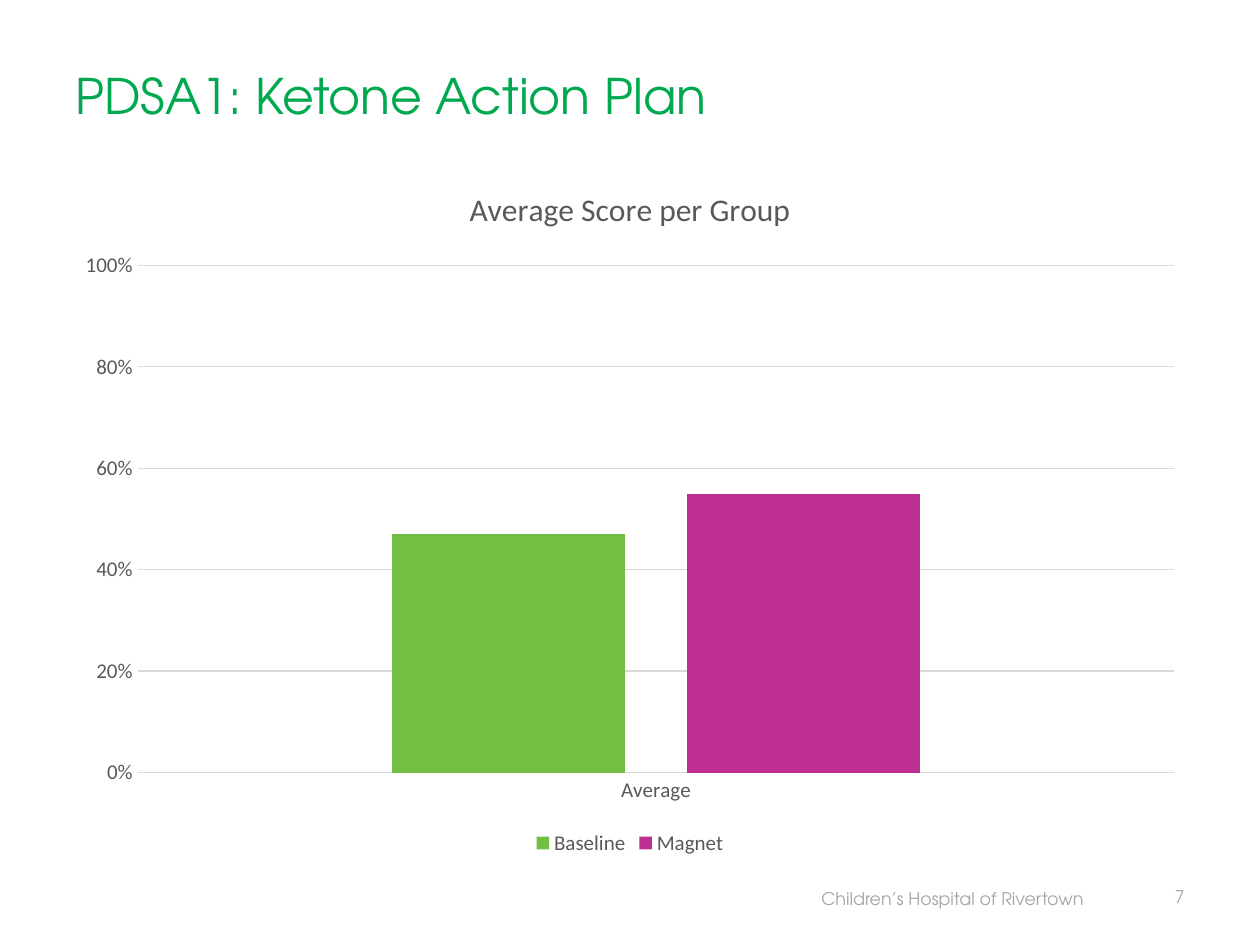
"""Build the ketone action plan slide with its average score chart."""
from pptx import Presentation, util as u
from pptx.chart.data import CategoryChartData
from pptx.dml.color import RGBColor
from pptx.enum import chart as ch, text as t

GREEN = RGBColor(0x00, 0xA9, 0x4F)
LIME = RGBColor(0x72, 0xBF, 0x44)
MAGENTA = RGBColor(0xBD, 0x2F, 0x92)
DARK_GRAY = RGBColor(0x59, 0x59, 0x59)
MID_GRAY = RGBColor(0xA6, 0xA6, 0xA6)
LIGHT_GRAY = RGBColor(0xD9, 0xD9, 0xD9)
HEAD_FONT, CHART_FONT = "TeX Gyre Adventor", "Calibri"

HEADING = "PDSA1: Ketone Action Plan"
CHART_TITLE = "Average Score per Group"
CATEGORIES = ["Average"]
GROUPS = [("Baseline", 0.47, LIME), ("Magnet", 0.55, MAGENTA)]
FOOTER = "Children’s Hospital of Rivertown"
PAGE = "7"

WIDTH, HEIGHT, MARGIN = 720, 540, 36
CONTENT_WIDTH = WIDTH - 2 * MARGIN


def style_font(font, size, color, name):
    font.size, font.name, font.bold = u.Pt(size), name, False
    font.color.rgb = color


def write(frame, words, size=10, color=MID_GRAY, name=HEAD_FONT,
          align=t.PP_ALIGN.LEFT, anchor=t.MSO_ANCHOR.TOP, wrap=True):
    frame.text = words
    frame.word_wrap = wrap
    frame.auto_size = t.MSO_AUTO_SIZE.NONE
    frame.vertical_anchor = anchor
    frame.paragraphs[0].alignment = align
    style_font(frame.paragraphs[0].runs[0].font, size, color, name)


def style_line(line):
    line.color.rgb = LIGHT_GRAY
    line.width = u.Pt(0.75)


def add_score_chart(slide):
    scores = CategoryChartData(number_format="0%")
    scores.categories = CATEGORIES
    for group, score, _ in GROUPS:
        scores.add_series(group, [score])
    chart = slide.shapes.add_chart(
        ch.XL_CHART_TYPE.COLUMN_CLUSTERED, u.Pt(MARGIN), u.Pt(92.16),
        u.Pt(CONTENT_WIDTH), u.Pt(399.6), scores).chart
    style_font(chart.font, 12, DARK_GRAY, CHART_FONT)

    chart.has_title = True
    heading = chart.chart_title.text_frame
    heading.text = CHART_TITLE
    style_font(heading.paragraphs[0].runs[0].font, 18, DARK_GRAY, CHART_FONT)
    chart.chart_title.include_in_layout = False

    chart.has_legend = True
    chart.legend.position = ch.XL_LEGEND_POSITION.BOTTOM
    chart.legend.include_in_layout = False
    style_font(chart.legend.font, 12, DARK_GRAY, CHART_FONT)

    for axis in (chart.category_axis, chart.value_axis):
        axis.major_tick_mark = axis.minor_tick_mark = ch.XL_TICK_MARK.NONE
        style_font(axis.tick_labels.font, 12, DARK_GRAY, CHART_FONT)
    style_line(chart.category_axis.format.line)
    percent = chart.value_axis
    percent.minimum_scale, percent.maximum_scale = 0, 1
    percent.major_unit = 0.2
    percent.tick_labels.number_format = "0%"
    percent.tick_labels.number_format_is_linked = False
    percent.format.line.fill.background()
    percent.has_major_gridlines = True
    style_line(percent.major_gridlines.format.line)

    columns = chart.plots[0]
    columns.gap_width, columns.overlap = 219, -27
    columns.vary_by_categories = False
    for series, (_, _, color) in zip(columns.series, GROUPS):
        series.format.fill.solid()
        series.format.fill.fore_color.rgb = color
        series.invert_if_negative = False


def main():
    deck = Presentation()
    deck.slide_width, deck.slide_height = u.Pt(WIDTH), u.Pt(HEIGHT)
    slide = deck.slides.add_slide(deck.slide_layouts[5])

    title = slide.shapes.title
    title.left, title.top = u.Pt(MARGIN), u.Pt(12.24)
    title.width, title.height = u.Pt(CONTENT_WIDTH), u.Pt(62.64)
    write(title.text_frame, HEADING, size=28, color=GREEN,
          anchor=t.MSO_ANCHOR.BOTTOM)

    add_score_chart(slide)

    footer = slide.shapes.add_textbox(
        u.Pt(462.24), u.Pt(504), u.Pt(172.08), u.Pt(19.44))
    write(footer.text_frame, FOOTER, wrap=False)
    page = slide.shapes.add_textbox(
        u.Pt(624.24), u.Pt(502.56), u.Pt(59.76), u.Pt(19.44))
    write(page.text_frame, PAGE, align=t.PP_ALIGN.RIGHT)

    deck.save("out.pptx")


if __name__ == "__main__":
    main()
